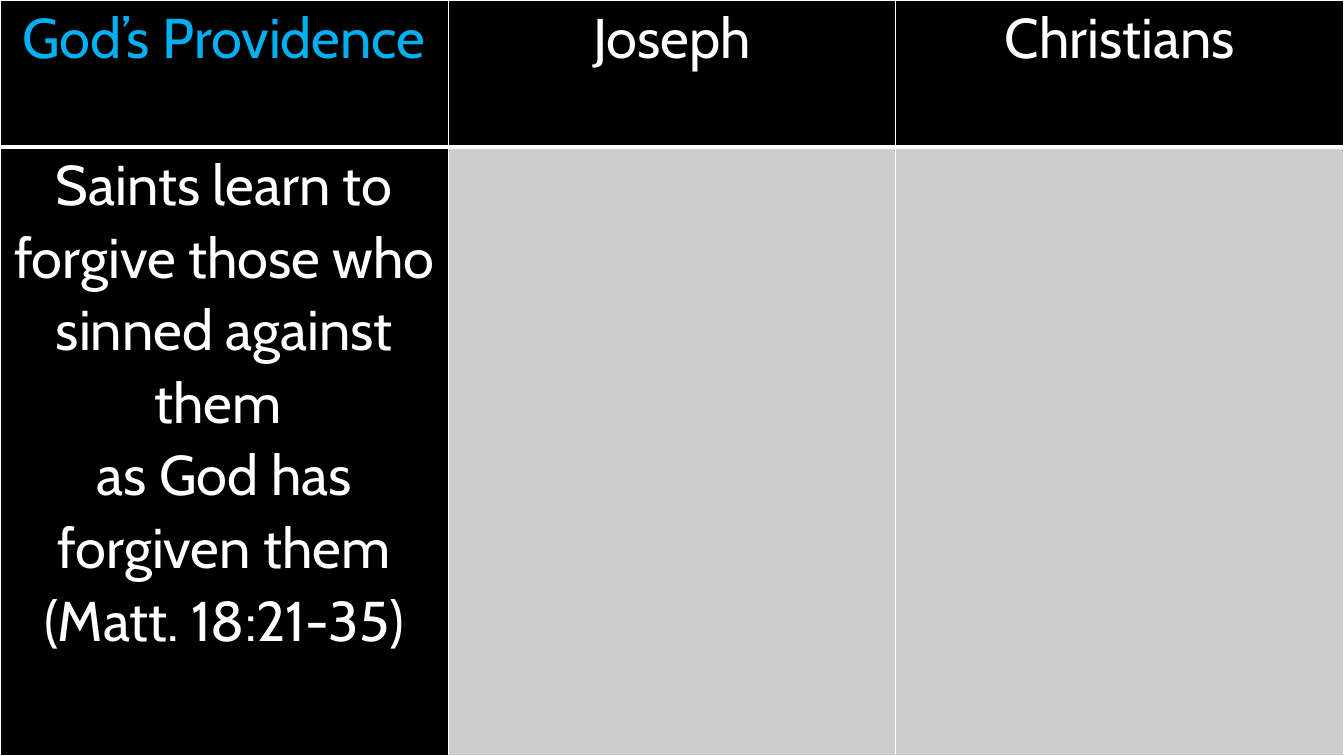
from dataclasses import dataclass

import pptx
import pptx.dml.color
import pptx.enum.text
import pptx.oxml.ns
import pptx.util
from lxml import etree

PX = 9525  # EMU per px, 96 px to the inch
WIDTH, HEIGHT = 1280, 720
COL_WIDTHS = (427, 426, 427)
ROW_HEIGHTS = (140, 580)
INSET = 7
FONT, FONT_SIZE, LINE_SPACING = "Cabin", 40, 1.07
THIN, THICK = 1, 3
COLORS = {"black": "000000", "white": "FFFFFF", "blue": "00B0F0", "gray": "CCCCCC"}


@dataclass(frozen=True)
class CellSpec:
    lines: tuple[str, ...] = ()
    fill: str = "black"
    color: str = "white"


ROWS = (
    (
        CellSpec(("God’s Providence",), color="blue"),
        CellSpec(("Joseph",)),
        CellSpec(("Christians",)),
    ),
    (
        CellSpec((
            "Saints learn to forgive those who sinned against them ",
            "as God has forgiven them",
            "(Matt. 18:21-35)",
        )),
        CellSpec(fill="gray"),
        CellSpec(fill="gray"),
    ),
)


def px(n: int) -> pptx.util.Emu:
    return pptx.util.Emu(n * PX)


def rgb(name: str) -> pptx.dml.color.RGBColor:
    return pptx.dml.color.RGBColor.from_string(COLORS[name])


def set_borders(cell: pptx.table._Cell, top: int, bottom: int) -> None:
    qn = pptx.oxml.ns.qn
    tc_pr = cell._tc.get_or_add_tcPr()
    for side, points in (("L", THIN), ("R", THIN), ("T", top), ("B", bottom)):
        ln = etree.SubElement(tc_pr, qn(f"a:ln{side}"), w=str(pptx.util.Pt(points)))
        fill = etree.SubElement(ln, qn("a:solidFill"))
        etree.SubElement(fill, qn("a:srgbClr"), val=COLORS["white"])


def write_lines(cell: pptx.table._Cell, spec: CellSpec) -> None:
    tf = cell.text_frame
    for i, line in enumerate(spec.lines):
        p = tf.paragraphs[0] if i == 0 else tf.add_paragraph()
        p.alignment = pptx.enum.text.PP_ALIGN.CENTER
        p.line_spacing = LINE_SPACING
        p.space_before = p.space_after = pptx.util.Pt(0)
        p.add_run().text = line
        p.font.name = FONT
        p.font.size = pptx.util.Pt(FONT_SIZE)
        p.font.bold = False
        p.font.color.rgb = rgb(spec.color)


def draw_cell(cell: pptx.table._Cell, spec: CellSpec, is_header: bool) -> None:
    cell.margin_left = cell.margin_right = px(INSET)
    cell.margin_top = cell.margin_bottom = px(0)
    # The rule under the header is the thick one
    set_borders(cell, THIN if is_header else THICK, THICK if is_header else THIN)
    cell.fill.solid()
    cell.fill.fore_color.rgb = rgb(spec.fill)
    write_lines(cell, spec)


def main() -> None:
    prs = pptx.Presentation()
    prs.slide_width, prs.slide_height = px(WIDTH), px(HEIGHT)
    slide = prs.slides.add_slide(prs.slide_layouts[6])
    slide.background.fill.solid()
    slide.background.fill.fore_color.rgb = rgb("black")

    # Comparison table filling the slide
    table = slide.shapes.add_table(
        len(ROWS), len(COL_WIDTHS), px(0), px(0), px(WIDTH), px(HEIGHT)
    ).table
    table.horz_banding = False
    for column, width in zip(table.columns, COL_WIDTHS):
        column.width = px(width)
    for r, (row, height) in enumerate(zip(ROWS, ROW_HEIGHTS)):
        table.rows[r].height = px(height)
        for c, spec in enumerate(row):
            draw_cell(table.cell(r, c), spec, is_header=r == 0)

    prs.save("out.pptx")


if __name__ == "__main__":
    main()
